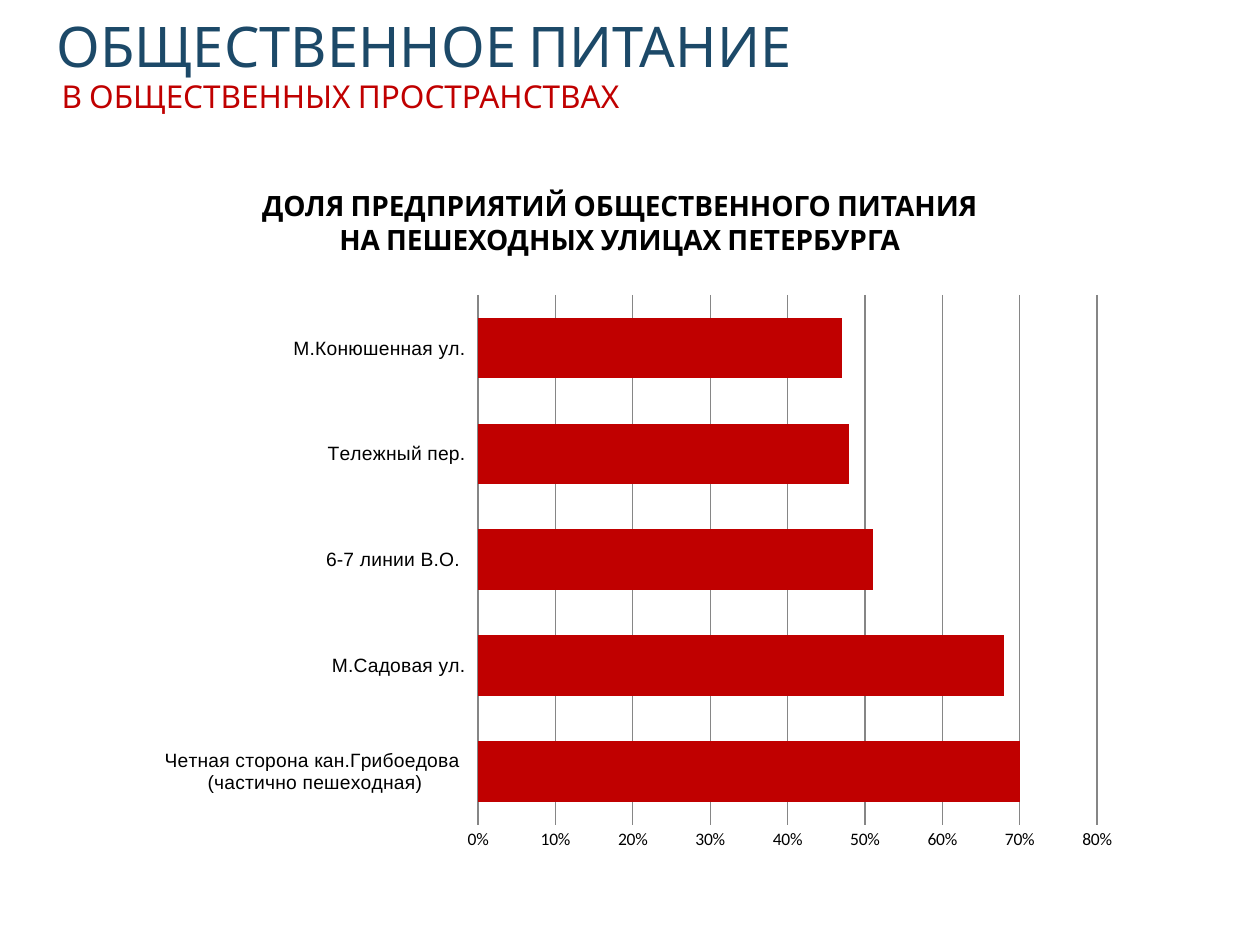
from dataclasses import dataclass

from lxml import etree
from pptx import Presentation
from pptx.chart.data import CategoryChartData
from pptx.dml.color import RGBColor
from pptx.enum.chart import XL_CHART_TYPE, XL_TICK_LABEL_POSITION, XL_TICK_MARK
from pptx.enum.text import MSO_ANCHOR, PP_ALIGN
from pptx.oxml.ns import qn
from pptx.util import Inches, Pt

BAR = XL_CHART_TYPE.BAR_CLUSTERED
NO_TICK = XL_TICK_MARK.NONE
LABELS_LOW = XL_TICK_LABEL_POSITION.LOW
TOP = MSO_ANCHOR.TOP
LEFT, CENTER = PP_ALIGN.LEFT, PP_ALIGN.CENTER

WIDTH, HEIGHT = Inches(10), Inches(7.5)
NAVY, RED, BLACK, GRAY = "1C4968", "C00000", "000000", "868686"


@dataclass
class Heading:
    text: str
    box: tuple  # left, top, width, height in inches
    size: int
    color: str
    bold: bool = False
    align: PP_ALIGN = LEFT
    wrap: bool = True
    spacing: int | None = None


HEADINGS = [
    Heading("ОБЩЕСТВЕННОЕ ПИТАНИЕ", (0.35, 0.13, 9, 1.89), 32, NAVY, spacing=32),
    Heading("ДОЛЯ ПРЕДПРИЯТИЙ ОБЩЕСТВЕННОГО ПИТАНИЯ\vНА ПЕШЕХОДНЫХ УЛИЦАХ ПЕТЕРБУРГА",
            (1.98, 1.45, 5.88, 0.64), 16, BLACK, bold=True, align=CENTER, wrap=False),
    Heading("В ОБЩЕСТВЕННЫХ ПРОСТРАНСТВАХ", (0.39, 0.56, 5.71, 0.4), 18, RED),
]

# Listed from the bottom bar to the top one
STREET_SHARES = {
    "Четная сторона кан.Грибоедова \n(частично пешеходная)": 0.70,
    "М.Садовая ул.": 0.68,
    "6-7 линии В.О. ": 0.51,
    "Тележный пер.": 0.48,
    "М.Конюшенная ул.": 0.47,
}
CHART_BOX = (1.22, 2.25, 7.8, 4.57)
PLOT_SHARES = {"x": 0.33, "y": 0.02, "w": 0.63, "h": 0.92}  # of the chart's size


def rgb(color: str) -> RGBColor:
    return RGBColor.from_string(color)


def add_heading(s, h: Heading) -> None:
    tf = s.shapes.add_textbox(*map(Inches, h.box)).text_frame
    tf.word_wrap = h.wrap
    tf.vertical_anchor = TOP
    p = tf.paragraphs[0]
    p.text = h.text
    p.alignment = h.align
    if h.spacing:
        p.line_spacing = Pt(h.spacing)
    p.font.name, p.font.size, p.font.bold = "Cabin", Pt(h.size), h.bold
    p.font.color.rgb = rgb(h.color)


def set_plot_layout(chart, shares: dict) -> None:
    """Fix the inner plot area as shares of the chart."""
    area = chart._chartSpace.chart.plotArea
    for old in area.findall(qn("c:layout")):
        area.remove(old)
    layout = etree.Element(qn("c:layout"))
    manual = etree.SubElement(layout, qn("c:manualLayout"))
    settings = {"layoutTarget": "inner", "xMode": "edge", "yMode": "edge", **shares}
    for tag, value in settings.items():
        etree.SubElement(manual, qn(f"c:{tag}")).set("val", str(value))
    area.insert(0, layout)


def add_share_chart(s) -> None:
    data = CategoryChartData(number_format="0%")
    data.categories = list(STREET_SHARES)
    data.add_series("Series 1", list(STREET_SHARES.values()))
    chart = s.shapes.add_chart(BAR, *map(Inches, CHART_BOX), data).chart
    chart.has_legend = chart.has_title = False
    chart.font.name, chart.font.size = "Calibri", Pt(10)
    chart.font.color.rgb = rgb(BLACK)
    set_plot_layout(chart, PLOT_SHARES)

    # Bars
    plot = chart.plots[0]
    plot.gap_width, plot.overlap, plot.vary_by_categories = 75, -25, False
    fill = plot.series[0].format.fill
    fill.solid()
    fill.fore_color.rgb = rgb(RED)

    # Axes
    streets, shares = chart.category_axis, chart.value_axis
    for axis in (streets, shares):
        axis.major_tick_mark = axis.minor_tick_mark = NO_TICK
    streets.tick_label_position = LABELS_LOW
    font = streets.tick_labels.font
    font.name, font.size = "Arial", Pt(11)
    font.color.rgb = rgb(BLACK)
    shares.minimum_scale, shares.maximum_scale, shares.major_unit = 0, 0.8, 0.1
    shares.tick_labels.number_format = "0%"
    shares.tick_labels.number_format_is_linked = False
    shares.format.line.fill.background()
    shares.has_major_gridlines = True
    for line in (streets.format.line, shares.major_gridlines.format.line):
        line.color.rgb = rgb(GRAY)
        line.width = Pt(0.75)


def main() -> None:
    prs = Presentation()
    prs.slide_width, prs.slide_height = WIDTH, HEIGHT
    s = prs.slides.add_slide(prs.slide_layouts[6])
    for heading in HEADINGS:
        add_heading(s, heading)
    add_share_chart(s)
    prs.save("out.pptx")


if __name__ == "__main__":
    main()
